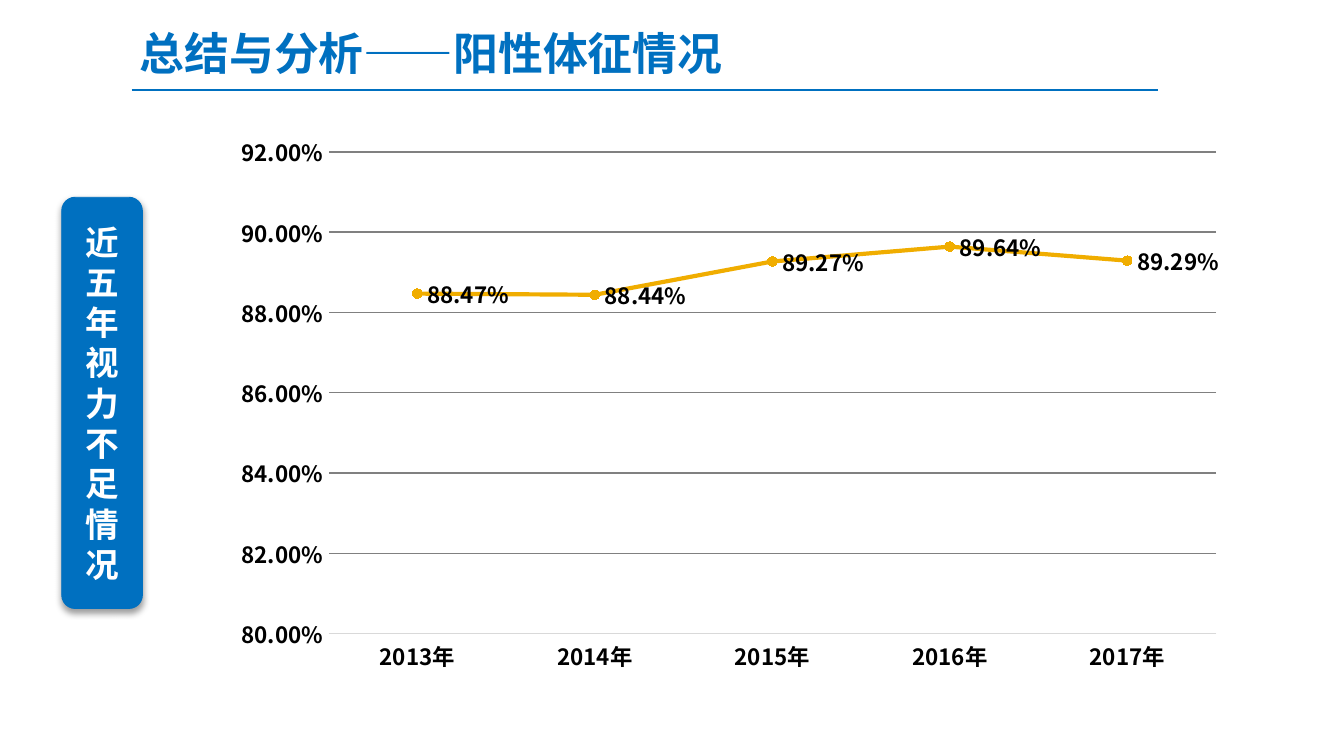
from lxml import etree
from pptx import Presentation
from pptx.chart.data import CategoryChartData
from pptx.dml.color import RGBColor
from pptx.enum.chart import (XL_CHART_TYPE, XL_LABEL_POSITION, XL_MARKER_STYLE,
                             XL_TICK_MARK)
from pptx.enum.shapes import MSO_CONNECTOR, MSO_SHAPE
from pptx.enum.text import MSO_ANCHOR, MSO_AUTO_SIZE, PP_ALIGN
from pptx.oxml import parse_xml
from pptx.oxml.ns import nsdecls, qn
from pptx.util import Inches, Pt

LINE_MARKERS = XL_CHART_TYPE.LINE_MARKERS
LABEL_RIGHT = XL_LABEL_POSITION.RIGHT
CIRCLE = XL_MARKER_STYLE.CIRCLE
NO_TICK = XL_TICK_MARK.NONE
STRAIGHT = MSO_CONNECTOR.STRAIGHT
ROUNDED = MSO_SHAPE.ROUNDED_RECTANGLE
TOP, MIDDLE = MSO_ANCHOR.TOP, MSO_ANCHOR.MIDDLE
GROW = MSO_AUTO_SIZE.SHAPE_TO_FIT_TEXT
LEFT, CENTER = PP_ALIGN.LEFT, PP_ALIGN.CENTER

TITLE_ONLY = 5
FONT = "Noto Sans CJK SC"
BLUE, GOLD, BLACK, WHITE = "0070C0", "F0AD00", "000000", "FFFFFF"
GRID_GREY, AXIS_GREY = "808080", "D9D9D9"
PERCENT = "0.00%"

YEARS = [f"{year}年" for year in range(2013, 2018)]
POOR_VISION = [0.8847, 0.8844, 0.8927, 0.8964, 0.8929]
PLOT_AREA = {"x": 0.11, "y": 0.05, "w": 0.87, "h": 0.86}


def rgb(color):
    return RGBColor.from_string(color)


def assign(target, values):
    for name, value in values.items():
        setattr(target, name, value)


def set_line(line, color, width):
    line.color.rgb = rgb(color)
    line.width = Pt(width)


def set_font(font, size, color):
    assign(font, {"name": FONT, "size": Pt(size), "bold": True})
    font.color.rgb = rgb(color)


def add_east_asian_font(element):
    """Give Chinese text the same typeface as the Latin text."""
    for latin in list(element.iter(qn("a:latin"))):
        latin.addnext(parse_xml(f'<a:ea {nsdecls("a")} typeface="{FONT}"/>'))


class SlideBuilder:
    """Places elements by percentages of the slide's width and height."""

    def __init__(self, presentation):
        self.width = presentation.slide_width
        self.height = presentation.slide_height
        self.slide = presentation.slides.add_slide(
            presentation.slide_layouts[TITLE_ONLY])
        self.shapes = self.slide.shapes

    def place(self, x, y, w, h):
        return [round(self.width * x / 100), round(self.height * y / 100),
                round(self.width * w / 100), round(self.height * h / 100)]

    def fill_text(self, shape, text, size, color, frame_format,
                  paragraph_format):
        frame = shape.text_frame
        frame.text = text
        assign(frame, frame_format)
        paragraph = frame.paragraphs[0]
        assign(paragraph, paragraph_format)
        set_font(paragraph.runs[0].font, size, color)
        add_east_asian_font(shape.element)

    def title(self, text, box):
        heading = self.shapes.title
        assign(heading, dict(zip(("left", "top", "width", "height"),
                                 self.place(*box))))
        self.fill_text(heading, text, 24, BLUE,
                       {"word_wrap": False, "auto_size": GROW,
                        "vertical_anchor": TOP},
                       {"alignment": LEFT, "line_spacing": 1.2})

    def rule(self, x, y, length):
        left, top, width, _ = self.place(x, y, length, 0)
        underline = self.shapes.add_connector(STRAIGHT, left, top,
                                              left + width, top)
        set_line(underline.line, BLUE, 1.25)
        etree.SubElement(underline.element.spPr, qn("a:effectLst"))

    def side_label(self, text, box):
        label = self.shapes.add_shape(ROUNDED, *self.place(*box))
        label.fill.solid()
        label.fill.fore_color.rgb = rgb(BLUE)
        set_line(label.line, BLUE, 0.5)
        label.element.spPr.append(parse_xml(
            f'<a:effectLst {nsdecls("a")}>'
            f'<a:outerShdw blurRad="{Pt(3.5)}" dist="{Pt(2)}" dir="5400000" '
            f'rotWithShape="0"><a:srgbClr val="{BLACK}">'
            '<a:alpha val="38000"/></a:srgbClr></a:outerShdw></a:effectLst>'))
        self.fill_text(label, text, 18, WHITE,
                       {"word_wrap": True, "vertical_anchor": MIDDLE},
                       {"alignment": CENTER, "line_spacing": Pt(21.6)})

    def line_chart(self, categories, values, box):
        data = CategoryChartData(number_format=PERCENT)
        data.categories = categories
        data.add_series("Series 1", values)
        chart = self.shapes.add_chart(LINE_MARKERS, *self.place(*box), data).chart
        assign(chart, {"has_legend": False, "has_title": False})
        set_font(chart.font, 12, BLACK)
        self.format_axes(chart)
        self.format_series(chart.plots[0])
        self.fix_plot_area(chart)
        add_east_asian_font(chart.element)

    def format_axes(self, chart):
        ticks = {"major_tick_mark": NO_TICK, "minor_tick_mark": NO_TICK}
        years, rates = chart.category_axis, chart.value_axis
        assign(years, ticks)
        set_line(years.format.line, AXIS_GREY, 0.75)
        assign(rates, ticks | {"minimum_scale": 0.8, "maximum_scale": 0.92,
                               "major_unit": 0.02})
        rates.format.line.fill.background()
        set_line(rates.major_gridlines.format.line, GRID_GREY, 0.75)
        assign(rates.tick_labels, {"number_format": PERCENT,
                                   "number_format_is_linked": False})
        for axis in (years, rates):
            set_font(axis.tick_labels.font, 12, BLACK)

    def format_series(self, plot):
        plot.vary_by_categories = False
        trend = plot.series[0]
        trend.smooth = False
        set_line(trend.format.line, GOLD, 2.25)
        assign(trend.marker, {"style": CIRCLE, "size": 5})
        trend.marker.format.fill.solid()
        trend.marker.format.fill.fore_color.rgb = rgb(GOLD)
        trend.marker.format.line.color.rgb = rgb(GOLD)
        labels = trend.data_labels
        assign(labels, {"show_value": True, "position": LABEL_RIGHT,
                        "number_format": PERCENT,
                        "number_format_is_linked": False})
        set_font(labels.font, 12, BLACK)

    def fix_plot_area(self, chart):
        area = chart.element.find(".//" + qn("c:plotArea"))
        for layout in area.findall(qn("c:layout")):
            area.remove(layout)
        modes = '<c:xMode val="edge"/><c:yMode val="edge"/>'
        shares = "".join(f'<c:{side} val="{share}"/>'
                         for side, share in PLOT_AREA.items())
        area.insert(0, parse_xml(
            f'<c:layout {nsdecls("c")}><c:manualLayout>'
            f'<c:layoutTarget val="inner"/>{modes}{shares}'
            '</c:manualLayout></c:layout>'))


def main():
    presentation = Presentation()
    presentation.slide_width = Inches(10)
    presentation.slide_height = Inches(10) * 9 // 16
    builder = SlideBuilder(presentation)
    builder.rule(9.8, 11.9, 76.4)
    builder.title("总结与分析——阳性体征情况", (9.4, 1.07, 46.3, 10.5))
    builder.side_label("近五年视力不足情况", (4.6, 26.1, 6, 54.4))
    builder.line_chart(YEARS, POOR_VISION, (16.1, 16.4, 75.9, 74.1))
    presentation.save("out.pptx")


if __name__ == "__main__":
    main()
